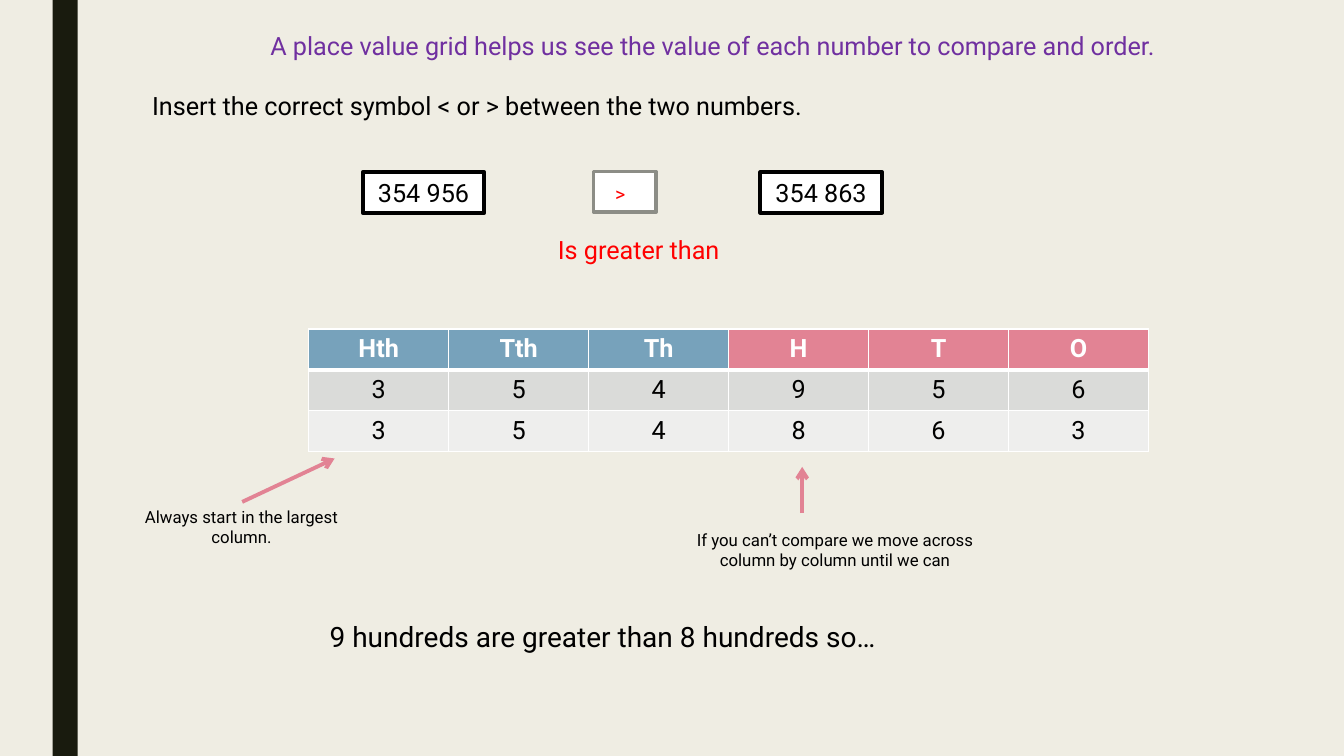
from dataclasses import dataclass

from lxml.etree import SubElement
from pptx import Presentation
from pptx.dml.color import RGBColor
from pptx.enum.shapes import MSO_CONNECTOR, MSO_SHAPE
from pptx.enum.text import MSO_ANCHOR, PP_ALIGN
from pptx.oxml.ns import qn
from pptx.util import Pt

FONT = "Roboto"
BLACK, WHITE, RED, PURPLE = "000000", "FFFFFF", "FF0000", "7030A0"
BACKGROUND, BAR, GREY = "EFEDE3", "191B0E", "8C8D86"
BLUE, PINK = "77A2BB", "E28394"
ROW_FILLS = ("DADBD9", "EEEEED")
LINE_WIDTH = 2.75


@dataclass
class Label:
    text: str
    left: float
    top: float
    width: float
    height: float
    size: float = 18
    color: str = BLACK
    align: PP_ALIGN = PP_ALIGN.CENTER
    inset: float = 7.2


@dataclass
class Box:
    left: float
    top: float
    width: float
    height: float
    fill: str = WHITE
    line: str | None = BLACK
    text: str = ""


@dataclass
class Arrow:
    start: tuple[float, float]
    end: tuple[float, float]


LABELS = [
    Label("A place value grid helps us see the value of each number to compare and order.",
          147.5, 18, 723.5, 29, color=PURPLE),
    Label("Insert the correct symbol < or > between the two numbers.",
          101.5, 61, 489, 29, align=PP_ALIGN.LEFT),
    Label("Always start in the largest column.", 73.5, 358.5, 198, 36, size=12, inset=20),
    Label("If you can’t compare we move across column by column until we can",
          469.5, 375, 254, 36, size=12),
    Label("9 hundreds are greater than 8 hundreds so…", 132, 439, 597, 31.5, size=20),
    Label(">", 432, 126.5, 22, 24, size=14, color=RED, inset=0),
    Label("Is greater than", 340, 163.5, 232.5, 29, color=RED),
]
BOXES = [
    Box(37.5, 0, 18, 540, fill=BAR, line=None),
    Box(259, 123, 87, 29, text="354 956"),
    Box(543, 123, 87, 29, text="354 863"),
    Box(424, 122.5, 44.5, 29, line=GREY),
]
ARROWS = [
    Arrow((173, 358.5), (239, 327.5)),
    Arrow((573, 366.5), (573, 333.5)),
]
GRID = [
    ("Hth", "Tth", "Th", "H", "T", "O"),
    tuple("354956"),
    tuple("354863"),
]
GRID_LEFT, GRID_TOP, COLUMN_WIDTH, ROW_HEIGHT = 220.5, 235, 100, 29.25


def rgb(color: str) -> RGBColor:
    return RGBColor.from_string(color)


def write_text(frame, text: str, *, size: float = 18, color: str = BLACK,
               bold: bool = False, align: PP_ALIGN = PP_ALIGN.CENTER) -> None:
    paragraph = frame.paragraphs[0]
    paragraph.alignment = align
    run = paragraph.add_run()
    run.text = text
    run.font.name = FONT
    run.font.size = Pt(size)
    run.font.bold = bold
    run.font.color.rgb = rgb(color)


def add_label(slide, label: Label) -> None:
    shape = slide.shapes.add_textbox(Pt(label.left), Pt(label.top),
                                     Pt(label.width), Pt(label.height))
    frame = shape.text_frame
    frame.word_wrap = True
    frame.margin_left = frame.margin_right = Pt(label.inset)
    write_text(frame, label.text, size=label.size, color=label.color, align=label.align)


def add_box(slide, box: Box) -> None:
    shape = slide.shapes.add_shape(MSO_SHAPE.RECTANGLE, Pt(box.left), Pt(box.top),
                                   Pt(box.width), Pt(box.height))
    shape.shadow.inherit = False
    shape.fill.solid()
    shape.fill.fore_color.rgb = rgb(box.fill)
    if box.line:
        shape.line.color.rgb = rgb(box.line)
        shape.line.width = Pt(LINE_WIDTH)
    else:
        shape.line.fill.background()
    if box.text:
        shape.text_frame.word_wrap = False
        shape.text_frame.vertical_anchor = MSO_ANCHOR.MIDDLE
        write_text(shape.text_frame, box.text)


def add_arrow(slide, arrow: Arrow) -> None:
    connector = slide.shapes.add_connector(
        MSO_CONNECTOR.STRAIGHT, *map(Pt, arrow.start), *map(Pt, arrow.end))
    connector.line.color.rgb = rgb(PINK)
    connector.line.width = Pt(LINE_WIDTH)
    properties = connector.element.spPr
    SubElement(properties.find(qn("a:ln")), qn("a:tailEnd"), type="arrow")
    SubElement(properties, qn("a:effectLst"))


def set_borders(cell, top: float, bottom: float) -> None:
    """Draw white cell borders; must run before the cell gets its fill."""
    properties = cell._tc.get_or_add_tcPr()
    for side, width in (("L", 1), ("R", 1), ("T", top), ("B", bottom)):
        line = SubElement(properties, qn(f"a:ln{side}"), w=str(Pt(width)))
        SubElement(SubElement(line, qn("a:solidFill")), qn("a:srgbClr"), val=WHITE)


def add_grid(slide) -> None:
    row_count, column_count = len(GRID), len(GRID[0])
    table = slide.shapes.add_table(
        row_count, column_count, Pt(GRID_LEFT), Pt(GRID_TOP),
        Pt(COLUMN_WIDTH * column_count), Pt(ROW_HEIGHT * row_count)).table
    for column in table.columns:
        column.width = Pt(COLUMN_WIDTH)
    for row_index, values in enumerate(GRID):
        table.rows[row_index].height = Pt(ROW_HEIGHT)
        header = row_index == 0
        for column_index, value in enumerate(values):
            cell = table.cell(row_index, column_index)
            set_borders(cell, top=3 if row_index == 1 else 1, bottom=3 if header else 1)
            if header:
                fill = BLUE if column_index < column_count // 2 else PINK
            else:
                fill = ROW_FILLS[row_index - 1]
            cell.fill.solid()
            cell.fill.fore_color.rgb = rgb(fill)
            cell.vertical_anchor = MSO_ANCHOR.MIDDLE
            write_text(cell.text_frame, value, bold=header,
                       color=WHITE if header else BLACK)


def main() -> None:
    presentation = Presentation()
    presentation.slide_width, presentation.slide_height = Pt(960), Pt(540)
    slide = presentation.slides.add_slide(presentation.slide_layouts[6])
    slide.background.fill.solid()
    slide.background.fill.fore_color.rgb = rgb(BACKGROUND)
    for box in BOXES:
        add_box(slide, box)
    add_grid(slide)
    for label in LABELS:
        add_label(slide, label)
    for arrow in ARROWS:
        add_arrow(slide, arrow)
    presentation.save("out.pptx")


if __name__ == "__main__":
    main()
